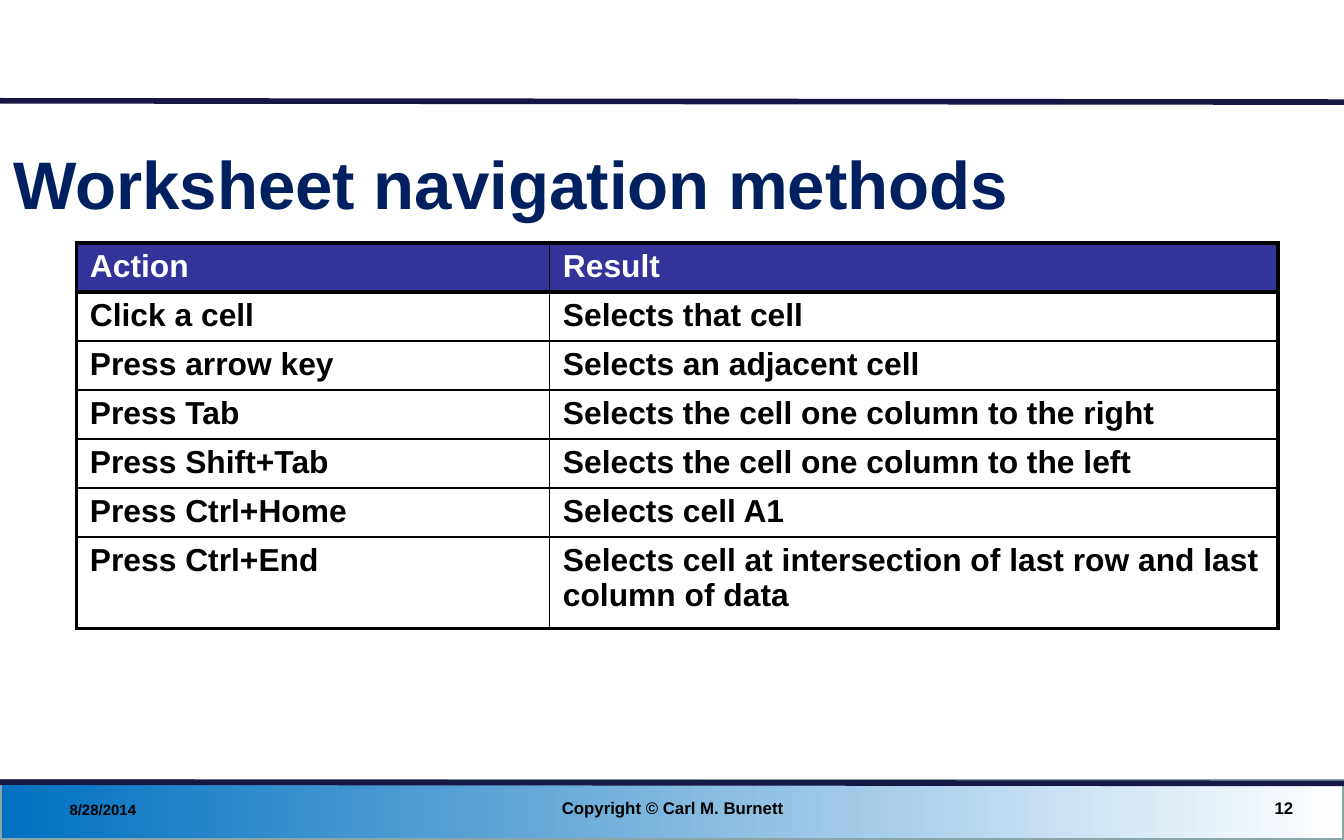
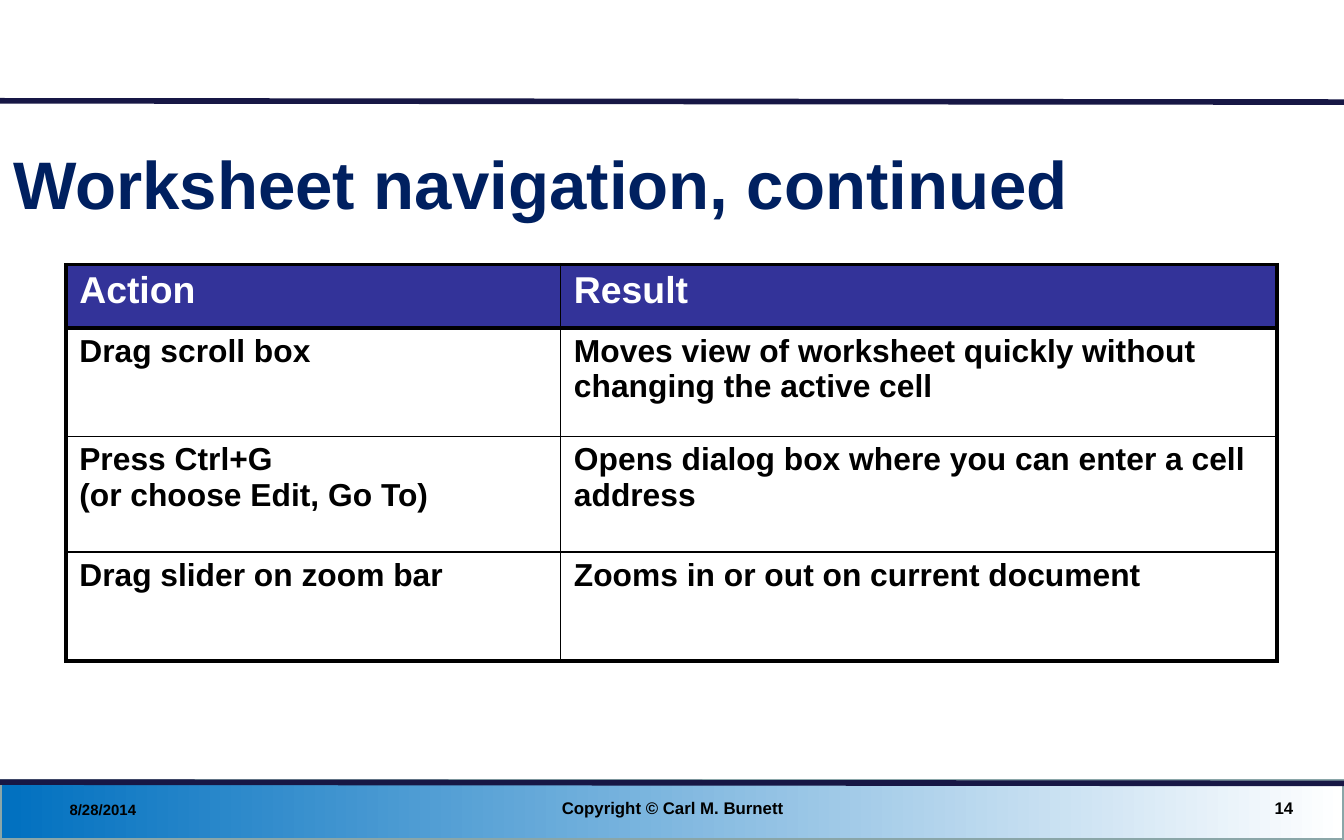
from lxml import etree
from pptx import Presentation
from pptx.dml.color import RGBColor
from pptx.enum.shapes import MSO_CONNECTOR, MSO_SHAPE
from pptx.enum.text import MSO_ANCHOR, PP_ALIGN
from pptx.oxml.ns import qn
from pptx.util import Pt

STRAIGHT = MSO_CONNECTOR.STRAIGHT
RECTANGLE = MSO_SHAPE.RECTANGLE
LEFT, CENTER, RIGHT = PP_ALIGN.LEFT, PP_ALIGN.CENTER, PP_ALIGN.RIGHT
TOP, MIDDLE = MSO_ANCHOR.TOP, MSO_ANCHOR.MIDDLE

FONT = "Arial"
COLORS = {
    "title": "002060",
    "rule": "171745",
    "band_start": "0070C0",
    "band_end": "FFFFFF",
    "band_edge": "8AA6A8",
    "header_fill": "333399",
    "header_text": "FFFFFF",
    "text": "000000",
    "grid": "000000",
}
RGB = {name: RGBColor.from_string(value) for name, value in COLORS.items()}
OUTER, INNER = 2.25, 1
BODY_SIZE = 17

LESSONS = [
    {
        "title": "Worksheet navigation methods",
        "number": "12",
        "origin": (41, 130.3),
        "columns": (253.4, 390.2),
        "row_heights": [25.9] * 6 + [49],
        "header_size": 17,
        "rows": [
            ("Action", "Result"),
            ("Click a cell", "Selects that cell"),
            ("Press arrow key", "Selects an adjacent cell"),
            ("Press Tab", "Selects the cell one column to the right"),
            ("Press Shift+Tab", "Selects the cell one column to the left"),
            ("Press Ctrl+Home", "Selects cell A1"),
            ("Press Ctrl+End",
             "Selects cell at intersection of last row and last column of data"),
        ],
    },
    {
        "title": "Worksheet navigation, continued",
        "number": "14",
        "origin": (35.3, 141.8),
        "columns": (265, 383.8),
        "row_heights": [33.8, 58.3, 61.9, 58.3],
        "header_size": 20,
        "rows": [
            ("Action", "Result"),
            ("Drag scroll box",
             "Moves view of worksheet quickly without changing the active cell"),
            ("Press Ctrl+G\n(or choose Edit, Go To)",
             "Opens dialog box where you can enter a cell address"),
            ("Drag slider on zoom bar", "Zooms in or out on current document"),
        ],
    },
]


def write(frame, text, size, color="text", align=LEFT, anchor=MIDDLE):
    """Put one bold paragraph into a text frame; a newline is a line break."""
    frame.word_wrap = True
    frame.vertical_anchor = anchor
    paragraph = frame.paragraphs[0]
    paragraph.text = text
    paragraph.alignment = align
    for run in paragraph.runs:
        run.font.name = FONT
        run.font.size = Pt(size)
        run.font.bold = True
        run.font.color.rgb = RGB[color]


def add_border(cell, side, width):
    """Draw one cell edge; call in the order L, R, T, B and before the fill."""
    edge = etree.SubElement(cell._tc.get_or_add_tcPr(), qn(f"a:ln{side}"), w=str(Pt(width)))
    solid = etree.SubElement(edge, qn("a:solidFill"))
    etree.SubElement(solid, qn("a:srgbClr"), val=COLORS["grid"])


prs = Presentation()
prs.slide_width, prs.slide_height = Pt(720), Pt(450)

for lesson in LESSONS:
    slide = prs.slides.add_slide(prs.slide_layouts[6])

    # Footer band and the two rules
    band = slide.shapes.add_shape(RECTANGLE, Pt(0), Pt(418.3), Pt(720), Pt(31.7))
    band.shadow.inherit = False
    band.fill.gradient()
    band.fill.gradient_angle = 0
    for stop, color in zip(band.fill.gradient_stops, ("band_start", "band_end")):
        stop.color.rgb = RGB[color]
    band.line.color.rgb = RGB["band_edge"]
    band.line.width = Pt(2)

    for rule_top in (419, 54):
        rule = slide.shapes.add_connector(
            STRAIGHT, Pt(0), Pt(rule_top), Pt(720), Pt(rule_top + 0.7))
        rule.line.color.rgb = RGB["rule"]
        rule.line.width = Pt(3)
        etree.SubElement(rule._element.spPr, qn("a:effectLst"))

    # Title and footer texts
    for text, box, style in (
        (lesson["title"], (0, 68.4, 689.8, 58.3), {"size": 36, "color": "title"}),
        ("8/28/2014", (30.2, 425.5, 167.8, 15.8), {"size": 8}),
        ("Copyright © Carl M. Burnett", (246.2, 424.1, 228.2, 17.3),
         {"size": 9, "align": CENTER}),
        (lesson["number"], (532.1, 424.1, 167.8, 17.3), {"size": 9, "align": RIGHT}),
    ):
        textbox = slide.shapes.add_textbox(*map(Pt, box))
        write(textbox.text_frame, text, **style)

    # Action and result table
    rows, columns, heights = lesson["rows"], lesson["columns"], lesson["row_heights"]
    left, top = lesson["origin"]
    actions = slide.shapes.add_table(
        len(rows), len(columns), Pt(left), Pt(top), Pt(sum(columns)), Pt(sum(heights))).table
    actions.first_row = actions.horz_banding = False
    for column, width in zip(actions.columns, columns):
        column.width = Pt(width)

    last_row, last_column = len(rows) - 1, len(columns) - 1
    for r, row in enumerate(rows):
        actions.rows[r].height = Pt(heights[r])
        is_header = r == 0
        for c, text in enumerate(row):
            cell = actions.cell(r, c)
            cell.margin_left = cell.margin_right = Pt(7.2)
            cell.margin_top = cell.margin_bottom = Pt(2.9)
            for side, is_heavy in (
                ("L", c == 0),
                ("R", c == last_column),
                ("T", r <= 1),
                ("B", r in (0, last_row)),
            ):
                add_border(cell, side, OUTER if is_heavy else INNER)
            if is_header:
                cell.fill.solid()
                cell.fill.fore_color.rgb = RGB["header_fill"]
            else:
                cell.fill.background()
            cell.vertical_anchor = TOP
            write(cell.text_frame, text, anchor=TOP,
                  size=lesson["header_size"] if is_header else BODY_SIZE,
                  color="header_text" if is_header else "text")

prs.save("out.pptx")
